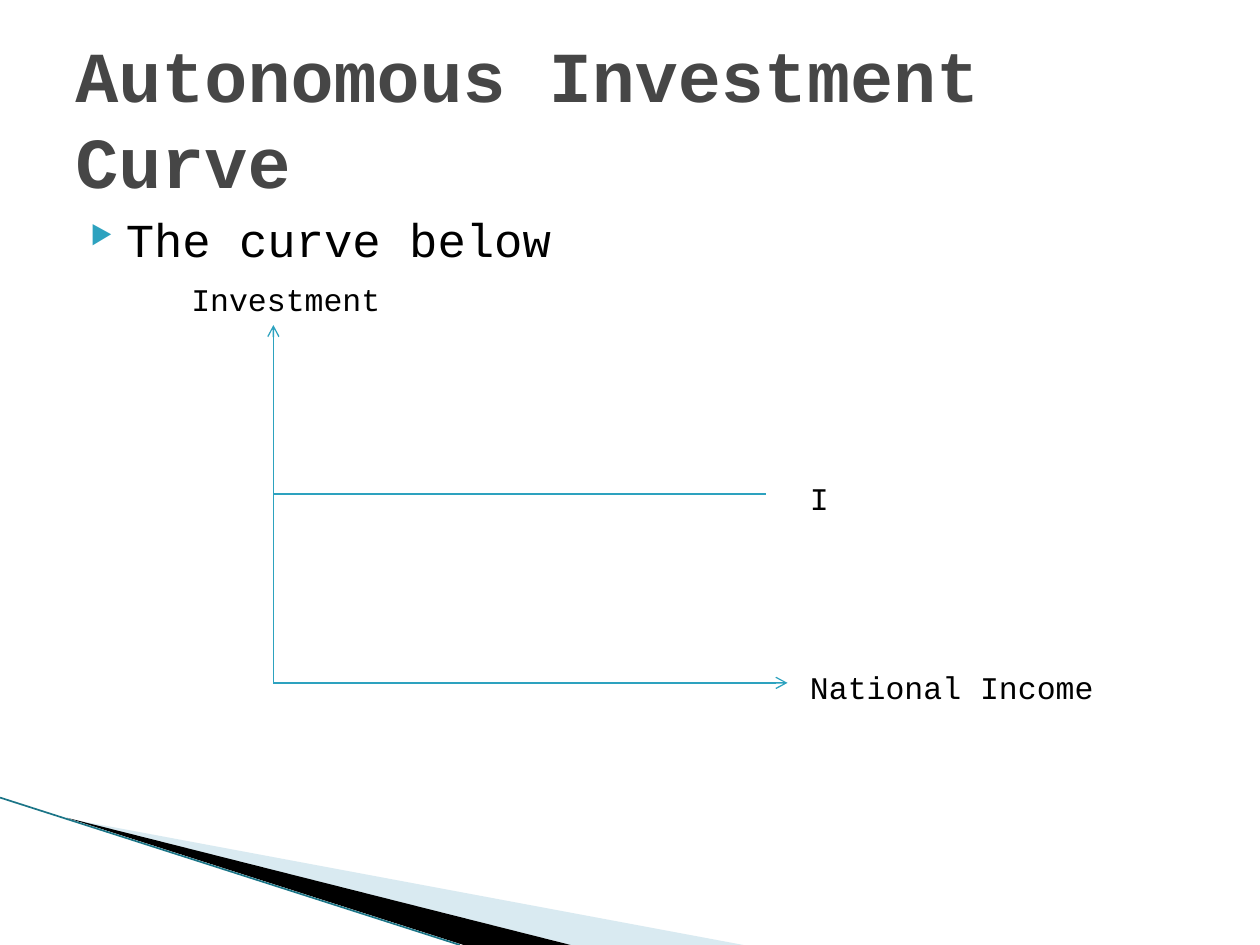
from lxml import etree
from pptx import Presentation
from pptx.dml.color import RGBColor
from pptx.enum.shapes import MSO_CONNECTOR
from pptx.enum.text import MSO_ANCHOR
from pptx.oxml.ns import qn
from pptx.util import Inches, Pt

STRAIGHT = MSO_CONNECTOR.STRAIGHT
TOP, MIDDLE = MSO_ANCHOR.TOP, MSO_ANCHOR.MIDDLE
W, H = 10, 7.5

THEME = {
    "font": "Courier New",
    "title": {"size": Pt(41), "bold": True, "color": "464646"},
    "body": {"size": Pt(27), "bold": False, "color": "000000"},
    "label": {"size": Pt(18), "bold": False, "color": "000000"},
    "accent": "2DA2BF", "edge": "1B7587", "pale": "A0CBDC", "dark": "000000",
}

# Diagram geometry: origin, axis ends and the level of the investment line
X0, Y0 = 2.17, 5.42
X_END, Y_TOP = 6.25, 2.58
LEVEL, LEVEL_END = 3.92, 6.08
LABEL_X, LABEL_RISE, LABEL_H = 6.33, 0.17, 0.4

TEXTS = [  # text, style, left, top, width, height
    ("Autonomous Investment Curve", "title", 0.5, 0.3, 9, 1.25),
    ("The curve below", "body", 0.5, 1.62, 9, 4.95),
    ("Investment", "label", 1.42, 2.17, 2, LABEL_H),
    ("National Income", "label", LABEL_X, Y0 - LABEL_RISE, 2.75, LABEL_H),
    ("I", "label", LABEL_X, LEVEL - LABEL_RISE, 0.5, LABEL_H),
]
LINES = [  # start, end, colour, width in points, arrow
    ((0, 6.33), (3.65, H), "edge", 0.95, False),
    ((X0, Y0), (X0, Y_TOP), "accent", 0.75, True),
    ((X0, Y0), (X_END, Y0), "accent", 0.75, True),
    ((X0, LEVEL), (LEVEL_END, LEVEL), "accent", 0.75, False),
]
WEDGES = [  # points, colour, opacity in percent
    ([(0.55, 6.5), (5.9, H), (4.53, H)], "pale", 40),
    ([(0.53, 6.49), (4.53, H), (3.68, H)], "dark", 100),
]


def rgb(name):
    return RGBColor.from_string(THEME.get(name, name))


def add_wedge(s, points, color, opacity):
    start, *rest = [(Inches(x), Inches(y)) for x, y in points]
    fb = s.shapes.build_freeform(*start)
    fb.add_line_segments(rest, close=True)
    sp = fb.convert_to_shape()
    sp.shadow.inherit = False
    sp.line.fill.background()
    sp.fill.solid()
    sp.fill.fore_color.rgb = rgb(color)
    if opacity < 100:
        clr = sp._element.spPr.find(qn("a:solidFill"))[0]
        etree.SubElement(clr, qn("a:alpha"), val=str(opacity * 1000))


def add_line(s, start, end, color, width, arrow):
    c = s.shapes.add_connector(STRAIGHT, *map(Inches, start + end))
    c.line.color.rgb = rgb(color)
    c.line.width = Pt(width)
    if arrow:
        etree.SubElement(c.line._get_or_add_ln(), qn("a:tailEnd"), type="arrow")
    etree.SubElement(c._element.spPr, qn("a:effectLst"))


def add_bullet(p):
    pPr = p._p.get_or_add_pPr()
    pPr.set("marL", str(Inches(0.4)))
    pPr.set("indent", str(Inches(-0.28)))
    clr = etree.SubElement(pPr, qn("a:buClr"))
    etree.SubElement(clr, qn("a:srgbClr"), val=THEME["accent"])
    etree.SubElement(pPr, qn("a:buSzPct"), val="54000")
    etree.SubElement(pPr, qn("a:buChar"), char="▶")


def add_text(s, text, style, *box):
    tf = s.shapes.add_textbox(*map(Inches, box)).text_frame
    tf.word_wrap = True
    tf.vertical_anchor = MIDDLE if style == "title" else TOP
    p = tf.paragraphs[0]
    if style == "body":
        add_bullet(p)
    r = p.add_run()
    r.text = text
    r.font.name = THEME["font"]
    for key, value in THEME[style].items():
        if key == "color":
            r.font.color.rgb = rgb(value)
        else:
            setattr(r.font, key, value)


prs = Presentation()
prs.slide_width, prs.slide_height = Inches(W), Inches(H)
s = prs.slides.add_slide(prs.slide_layouts[6])
for add, items in ((add_wedge, WEDGES), (add_line, LINES), (add_text, TEXTS)):
    for item in items:
        add(s, *item)
prs.save("out.pptx")
